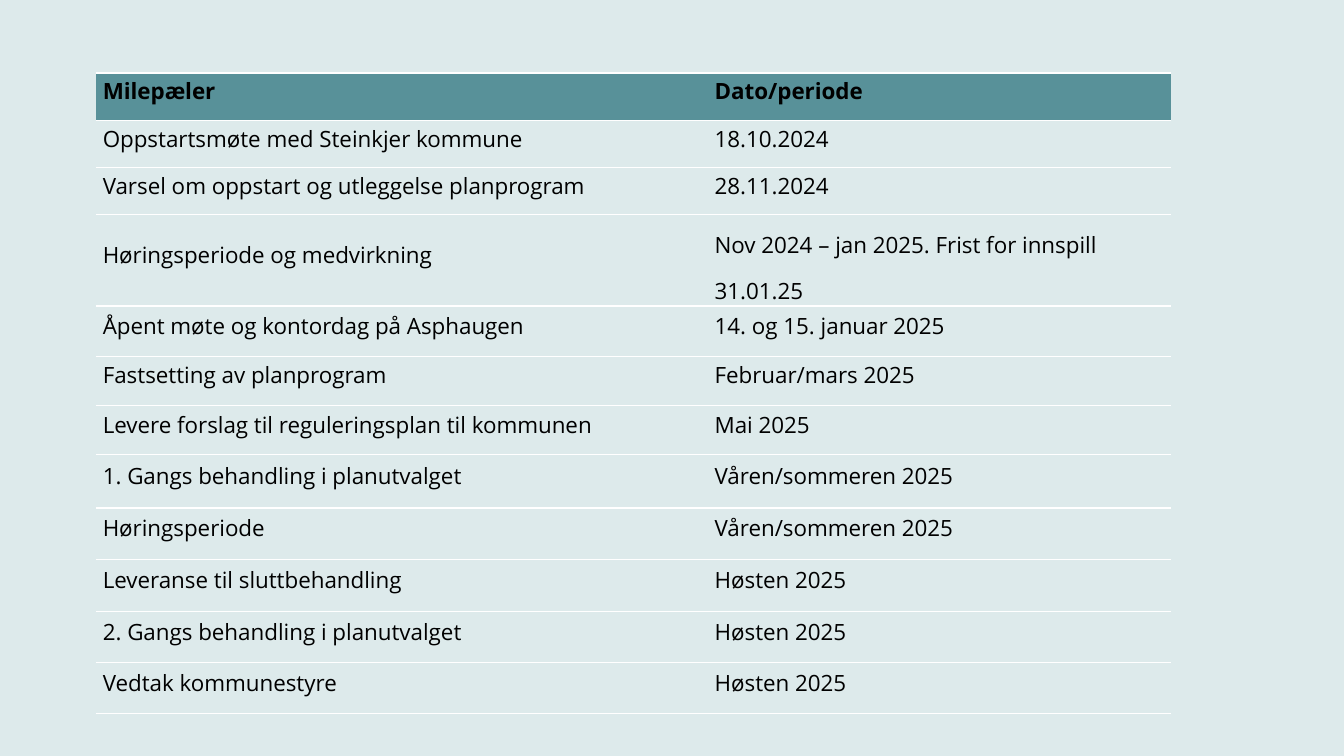
"""Build a slide with the milestone table of a zoning plan process."""
from lxml import etree
from pptx import Presentation
from pptx.dml.color import RGBColor
from pptx.enum.text import MSO_ANCHOR
from pptx.oxml.ns import qn
from pptx.util import Cm, Pt

HEADINGS = ("Milepæler", "Dato/periode")
MILESTONES = [
    ("Oppstartsmøte med Steinkjer kommune", "18.10.2024", 1.19),
    ("Varsel om oppstart og utleggelse planprogram", "28.11.2024", 1.19),
    ("Høringsperiode og medvirkning", "Nov 2024 – jan 2025. Frist for innspill 31.01.25", 1.88),
    ("Åpent møte og kontordag på Asphaugen", "14. og 15. januar 2025", 1.27),
    ("Fastsetting av planprogram", "Februar/mars 2025", 1.23),
    ("Levere forslag til reguleringsplan til kommunen", "Mai 2025", 1.25),
    ("1. Gangs behandling i planutvalget", "Våren/sommeren 2025", 1.34),
    ("Høringsperiode", "Våren/sommeren 2025", 1.3),
    ("Leveranse til sluttbehandling", "Høsten 2025", 1.32),
    ("2. Gangs behandling i planutvalget", "Høsten 2025", 1.27),
    ("Vedtak kommunestyre", "Høsten 2025", 1.3),
]
COLUMN_WIDTHS = (15.42, 11.68)
HEADING_HEIGHT = 1.19
LEFT, TOP = 2.41, 1.84
WRAPPED_DATE = MILESTONES[2][1]

THEME = {
    "background": "DDEAEB",
    "heading": "589199",
    "rule": "FFFFFF",
    "rule_width": Pt(1),
    "line": Pt(14),
    "wrapped_line": 1.5,
    "plain_table": "{2D5ABB26-0587-4C30-8999-92F81FD0307C}",
}
FONT = {"name": "Open Sans", "size": Pt(16)}
CELL = {
    "vertical_anchor": MSO_ANCHOR.MIDDLE,
    "margin_left": Cm(0.18),
    "margin_right": Cm(0.18),
    "margin_top": 0,
    "margin_bottom": 0,
}


def apply(target, formats):
    """Set each attribute of target from a dict."""
    for attribute, value in formats.items():
        setattr(target, attribute, value)


def add_rule(cell, side):
    """Draw a cell border on one side."""
    properties = cell._tc.get_or_add_tcPr()
    rule = etree.SubElement(properties, qn(f"a:{side}"), w=str(THEME["rule_width"]))
    fill = etree.SubElement(rule, qn("a:solidFill"))
    etree.SubElement(fill, qn("a:srgbClr"), val=THEME["rule"])


def fill_cell(cell, wording, is_heading):
    """Write and format one cell."""
    apply(cell, CELL)
    for side in ("lnT", "lnB"):
        add_rule(cell, side)
    if is_heading:
        cell.fill.solid()
        cell.fill.fore_color.rgb = RGBColor.from_string(THEME["heading"])
    else:
        cell.fill.background()
    paragraph = cell.text_frame.paragraphs[0]
    paragraph.line_spacing = THEME["wrapped_line" if wording == WRAPPED_DATE else "line"]
    run = paragraph.add_run()
    run.text = wording
    apply(run.font, {**FONT, "bold": is_heading})
    run.font.color.rgb = RGBColor(0, 0, 0)


def main():
    """Create the slide and save it."""
    presentation = Presentation()
    apply(presentation, {"slide_width": Cm(33.87), "slide_height": Cm(19.05)})
    slide = presentation.slides.add_slide(presentation.slide_layouts[6])
    slide.background.fill.solid()
    slide.background.fill.fore_color.rgb = RGBColor.from_string(THEME["background"])

    rows = [(*HEADINGS, HEADING_HEIGHT), *MILESTONES]
    total_height = sum(height for *_, height in rows)
    frame = slide.shapes.add_table(
        len(rows), len(HEADINGS), Cm(LEFT), Cm(TOP), Cm(sum(COLUMN_WIDTHS)), Cm(total_height)
    )
    plan = frame.table
    plan.horz_banding = False
    next(frame.element.iter(qn("a:tableStyleId"))).text = THEME["plain_table"]
    for column, width in zip(plan.columns, COLUMN_WIDTHS):
        column.width = Cm(width)
    for index, (milestone, period, height) in enumerate(rows):
        plan.rows[index].height = Cm(height)
        for cell, wording in zip(plan.rows[index].cells, (milestone, period)):
            fill_cell(cell, wording, index == 0)

    presentation.save("out.pptx")


if __name__ == "__main__":
    main()
